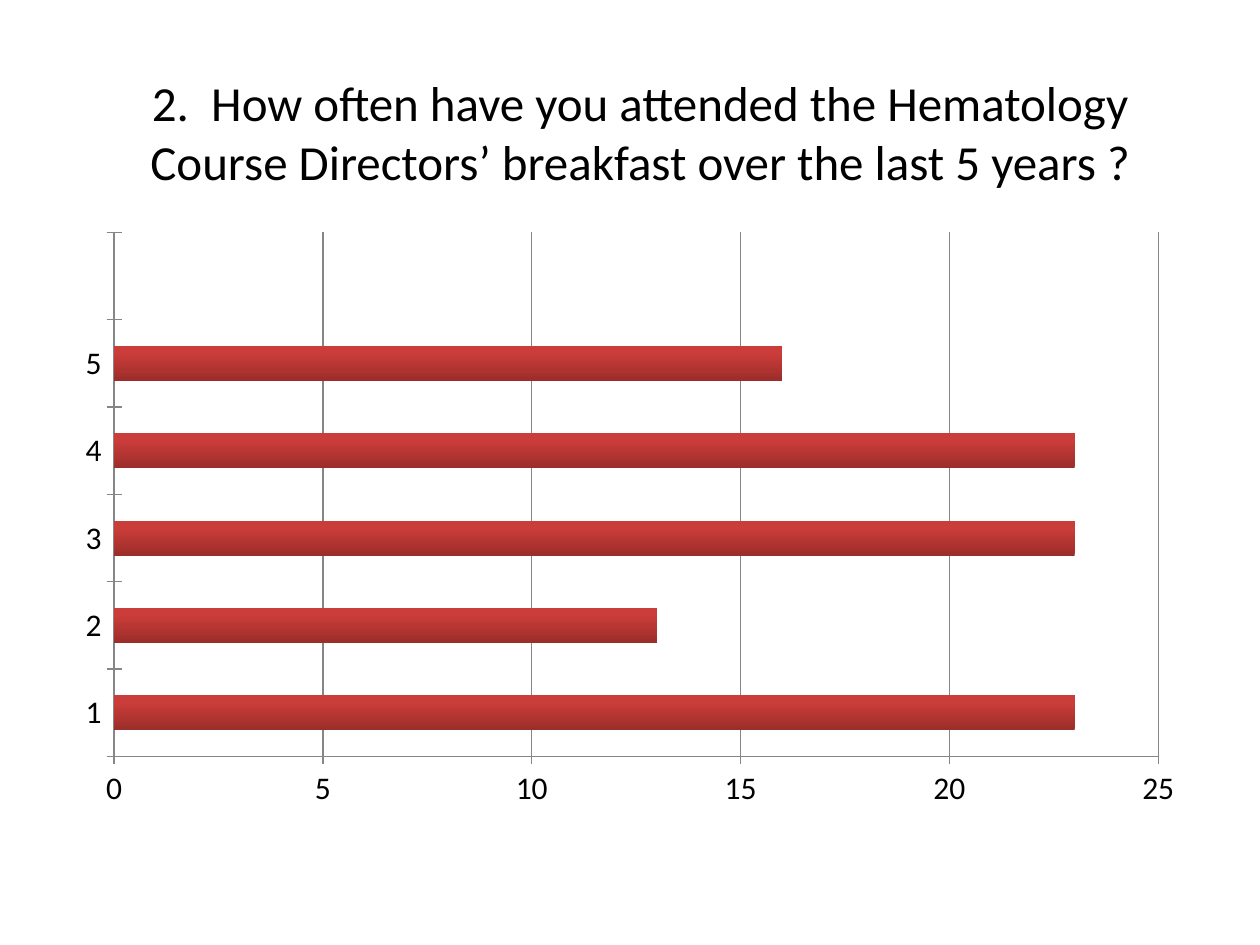
"""Build a survey slide with a bar chart of breakfast attendance."""
from pptx import Presentation
from pptx.chart.data import CategoryChartData
from pptx.dml.color import RGBColor
from pptx.enum.chart import XL_CHART_TYPE, XL_TICK_MARK
from pptx.enum.text import MSO_ANCHOR, PP_ALIGN
from pptx.util import Inches, Pt

BAR_CLUSTERED = XL_CHART_TYPE.BAR_CLUSTERED
CROSS = XL_TICK_MARK.CROSS
MIDDLE = MSO_ANCHOR.MIDDLE
CENTER = PP_ALIGN.CENTER

QUESTION = ("2.  How often have you attended the Hematology Course Directors’ "
            "breakfast over the last 5 years ?")
ANSWERS = [("1", 23), ("2", 13), ("3", 23), ("4", 23), ("5", 16), ("", None)]
FONT = "Calibri"
COLORS = {"text": "000000", "line": "868686", "bar_dark": "9B2D2A", "bar_light": "CB3D3A"}
BAR_STOPS = [("bar_dark", 0), ("bar_light", 0.8)]


def color(name):
    return RGBColor.from_string(COLORS[name])


def style_font(font, size):
    font.name = FONT
    font.size = Pt(size)
    font.bold = False
    font.color.rgb = color("text")


def style_line(line):
    line.color.rgb = color("line")
    line.width = Pt(0.75)


def add_question(slide):
    title = slide.shapes.title
    title.left, title.top = Inches(0.58), Inches(0.42)
    title.width, title.height = Inches(9), Inches(1.25)
    frame = title.text_frame
    frame.text = QUESTION
    frame.word_wrap = True
    frame.vertical_anchor = MIDDLE
    paragraph = frame.paragraphs[0]
    paragraph.alignment = CENTER
    style_font(paragraph.runs[0].font, 28)


def add_attendance_chart(slide):
    attendance = CategoryChartData()
    attendance.categories = [label for label, _ in ANSWERS]
    attendance.add_series("Series 1", [count for _, count in ANSWERS])
    chart = slide.shapes.add_chart(BAR_CLUSTERED, Inches(0.5), Inches(1.75),
                                   Inches(9), Inches(4.75), attendance).chart
    chart.has_legend = False
    chart.has_title = False
    style_font(chart.font, 18)

    for axis in (chart.category_axis, chart.value_axis):
        axis.major_tick_mark = CROSS
        style_line(axis.format.line)
    counts = chart.value_axis
    counts.minimum_scale, counts.maximum_scale, counts.major_unit = 0, 25, 5
    counts.has_major_gridlines = True
    style_line(counts.major_gridlines.format.line)

    plot = chart.plots[0]
    plot.gap_width = 150
    plot.vary_by_categories = False
    bars = plot.series[0]
    bars.invert_if_negative = False
    fill = bars.format.fill
    fill.gradient()
    fill.gradient_angle = 90
    for stop, (name, position) in zip(fill.gradient_stops, BAR_STOPS):
        stop.color.rgb = color(name)
        stop.position = position


def main():
    presentation = Presentation()
    presentation.slide_width, presentation.slide_height = Inches(10), Inches(7.5)
    slide = presentation.slides.add_slide(presentation.slide_layouts[5])
    add_question(slide)
    add_attendance_chart(slide)
    presentation.save("out.pptx")


if __name__ == "__main__":
    main()
